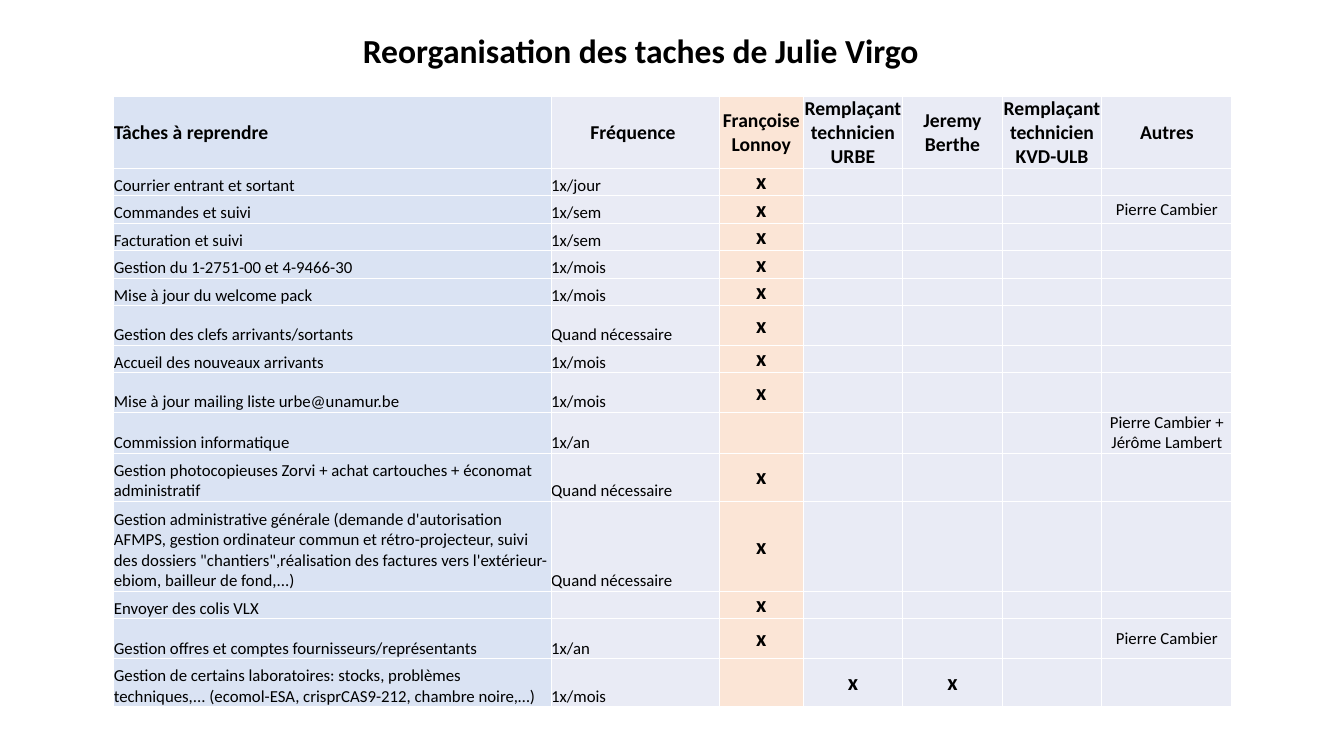
from lxml import etree
from pptx import Presentation
from pptx.dml.color import RGBColor
from pptx.enum.text import MSO_ANCHOR, MSO_AUTO_SIZE, PP_ALIGN
from pptx.oxml.ns import qn
from pptx.util import Cm, Pt

LEFT, CENTER = PP_ALIGN.LEFT, PP_ALIGN.CENTER
MIDDLE, BOTTOM = MSO_ANCHOR.MIDDLE, MSO_ANCHOR.BOTTOM
FIT_SHAPE = MSO_AUTO_SIZE.SHAPE_TO_FIT_TEXT

BLACK, WHITE = "000000", "FFFFFF"
TASK_BLUE, PALE_BLUE, PEACH = "DAE3F3", "E9EBF5", "FBE5D6"

COLUMN_WIDTHS = [11.02, 4.24, 2.11, 2.51, 2.51, 2.51, 3.28]
COLUMN_FILLS = [TASK_BLUE, PALE_BLUE, PEACH] + [PALE_BLUE] * 4
HEADER_HEIGHT, ONE_LINE, TALL, TWO_LINES, FOUR_LINES = 1.3, 0.64, 1.0, 1.21, 2.27

HEADINGS = [
    "Tâches à reprendre", "Fréquence ", "Françoise Lonnoy",
    "Remplaçant technicien URBE", "Jeremy Berthe",
    "Remplaçant technicien KVD-ULB", "Autres",
]
FRANCOISE = ("x", "", "", "")
TECHNICIANS = ("", "x", "x", "")
NOBODY = ("", "", "", "")
TASKS = [
    (ONE_LINE, "Courrier entrant et sortant", "1x/jour", FRANCOISE, ""),
    (ONE_LINE, "Commandes et suivi", "1x/sem", FRANCOISE, "Pierre Cambier"),
    (ONE_LINE, "Facturation et suivi", "1x/sem", FRANCOISE, ""),
    (ONE_LINE, "Gestion du 1-2751-00 et 4-9466-30", "1x/mois", FRANCOISE, ""),
    (ONE_LINE, "Mise à jour du welcome pack", "1x/mois", FRANCOISE, ""),
    (TALL, "Gestion des clefs arrivants/sortants", "Quand nécessaire", FRANCOISE, ""),
    (ONE_LINE, "Accueil des nouveaux arrivants", "1x/mois", FRANCOISE, ""),
    (TALL, "Mise à jour mailing liste urbe@unamur.be", "1x/mois", FRANCOISE, ""),
    (ONE_LINE, "Commission informatique", "1x/an", NOBODY,
     "Pierre Cambier + Jérôme Lambert"),
    (TWO_LINES, "Gestion photocopieuses Zorvi + achat cartouches + économat "
     "administratif", "Quand nécessaire", FRANCOISE, ""),
    (FOUR_LINES, "Gestion administrative générale (demande d'autorisation AFMPS, "
     "gestion ordinateur commun et rétro-projecteur, suivi des dossiers "
     "\"chantiers\",réalisation des factures vers l'extérieur-ebiom, "
     "bailleur de fond,...)", "Quand nécessaire", FRANCOISE, ""),
    (ONE_LINE, "Envoyer des colis VLX", "", FRANCOISE, ""),
    (TALL, "Gestion offres et comptes fournisseurs/représentants", "1x/an",
     FRANCOISE, "Pierre Cambier"),
    (TWO_LINES, "Gestion de certains laboratoires: stocks, problèmes techniques,... "
     "(ecomol-ESA, crisprCAS9-212, chambre noire,…)", "1x/mois", TECHNICIANS, ""),
]


def color(hex_code):
    return RGBColor.from_string(hex_code)


def write(frame, text, size=12, bold=False, align=LEFT):
    paragraph = frame.paragraphs[0]
    paragraph.alignment = align
    if not text:
        paragraph._p.get_or_add_endParaRPr().set("sz", str(size * 100))
        return
    run = paragraph.add_run()
    run.text = text
    run.font.name = "Calibri"
    run.font.size = Pt(size)
    run.font.bold = bold
    run.font.color.rgb = color(BLACK)


def add_borders(cell):
    properties = cell._tc.get_or_add_tcPr()
    for side in ("a:lnL", "a:lnR", "a:lnT", "a:lnB"):
        border = etree.SubElement(properties, qn(side), w=str(Pt(1)))
        fill = etree.SubElement(border, qn("a:solidFill"))
        etree.SubElement(fill, qn("a:srgbClr"), val=WHITE)


def fill_cell(cell, text, background, anchor=MIDDLE, **text_format):
    cell.margin_left = cell.margin_right = cell.margin_top = cell.margin_bottom = 0
    cell.vertical_anchor = anchor
    add_borders(cell)
    cell.fill.solid()
    cell.fill.fore_color.rgb = color(background)
    write(cell.text_frame, text, **text_format)


def add_title(slide):
    title = slide.shapes.add_textbox(Cm(7.77), Cm(0.64), Cm(16.76), Cm(1.27))
    title.text_frame.word_wrap = True
    title.text_frame.auto_size = FIT_SHAPE
    write(title.text_frame, "Reorganisation des taches de Julie Virgo",
          size=24, bold=True, align=CENTER)


def add_task_table(slide):
    heights = [HEADER_HEIGHT] + [task[0] for task in TASKS]
    table = slide.shapes.add_table(
        len(heights), len(HEADINGS), Cm(2.87), Cm(2.44),
        Cm(sum(COLUMN_WIDTHS)), Cm(sum(heights))).table
    table.first_row = False
    table.horz_banding = False
    for column, width in zip(table.columns, COLUMN_WIDTHS):
        column.width = Cm(width)
    for row, height in zip(table.rows, heights):
        row.height = Cm(height)

    for index, heading in enumerate(HEADINGS):
        fill_cell(table.cell(0, index), heading, COLUMN_FILLS[index],
                  size=14, bold=True, align=CENTER if index else LEFT)

    for row_index, (_, task, frequency, marks, others) in enumerate(TASKS, 1):
        for index, text in enumerate((task, frequency, *marks, others)):
            is_mark = text == "x"
            fill_cell(table.cell(row_index, index), text, COLUMN_FILLS[index],
                      anchor=BOTTOM if index < 2 else MIDDLE,
                      size=16 if is_mark else 12, bold=is_mark,
                      align=LEFT if index < 2 else CENTER)


def main():
    presentation = Presentation()
    presentation.slide_width = Cm(33.87)
    presentation.slide_height = Cm(19.05)
    slide = presentation.slides.add_slide(presentation.slide_layouts[6])
    add_task_table(slide)
    add_title(slide)
    presentation.save("out.pptx")


if __name__ == "__main__":
    main()
